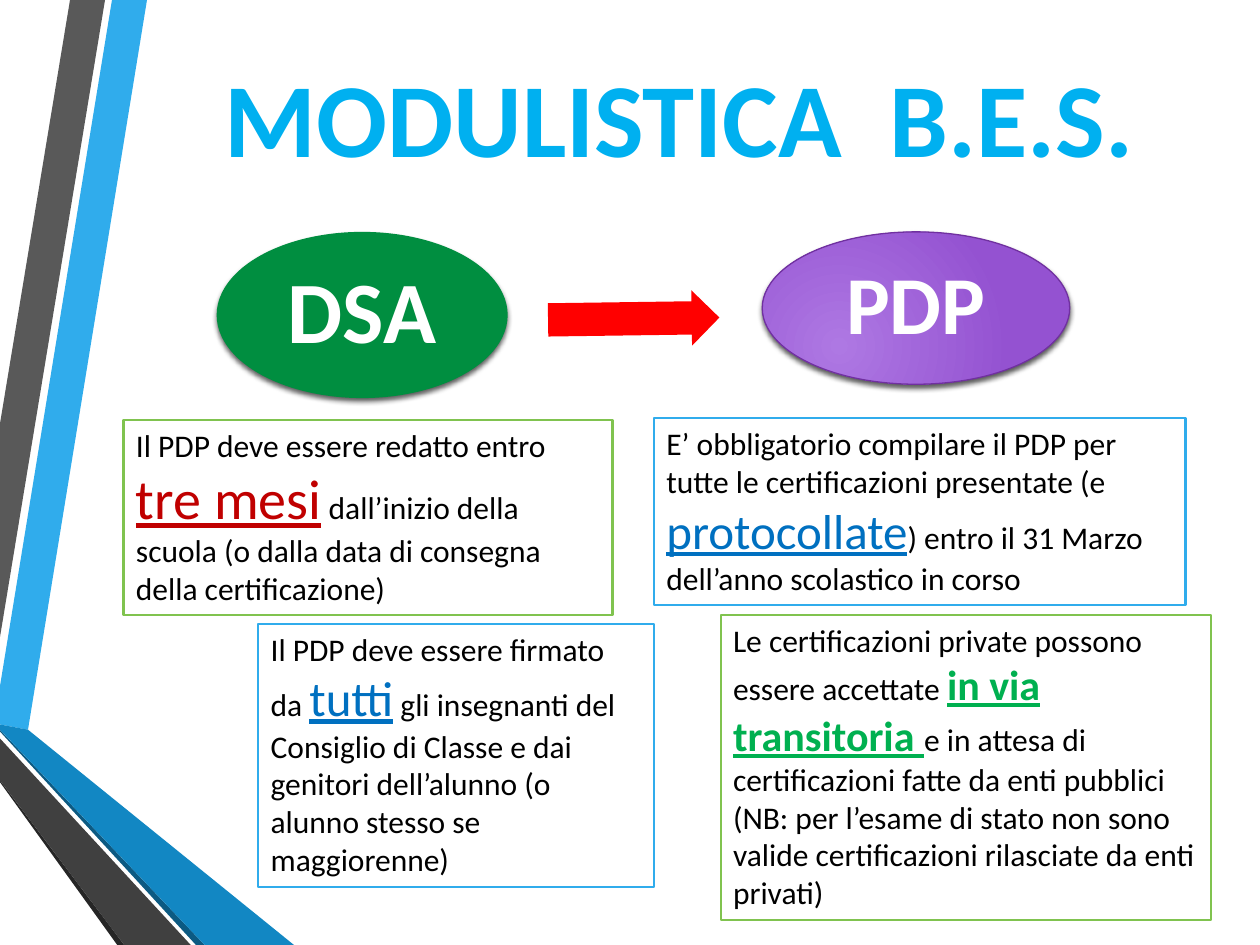
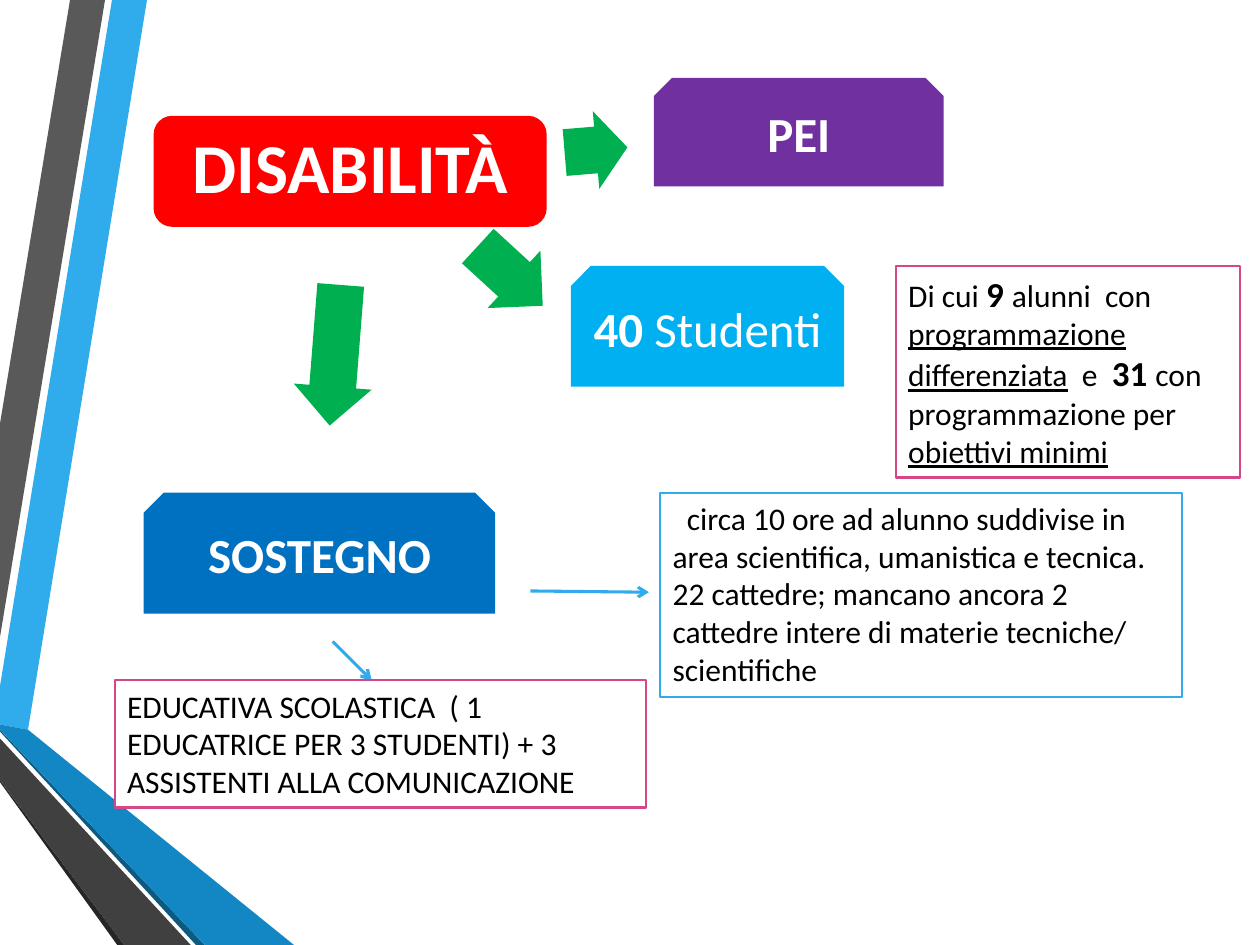
from dataclasses import dataclass

from pptx import Presentation
from pptx.dml.color import RGBColor
from pptx.enum.shapes import MSO_CONNECTOR, MSO_SHAPE
from pptx.enum.text import MSO_ANCHOR, MSO_AUTO_SIZE, PP_ALIGN
from pptx.oxml import parse_xml
from pptx.oxml.ns import nsdecls, qn
from pptx.oxml.xmlchemy import OxmlElement
from pptx.util import Pt

OVAL, ROUND = MSO_SHAPE.OVAL, MSO_SHAPE.ROUNDED_RECTANGLE
SNIP, RECT = MSO_SHAPE.SNIP_2_SAME_RECTANGLE, MSO_SHAPE.RECTANGLE
ARROW, STRAIGHT = MSO_SHAPE.RIGHT_ARROW, MSO_CONNECTOR.STRAIGHT
TOP, MIDDLE = MSO_ANCHOR.TOP, MSO_ANCHOR.MIDDLE
LEFT, CENTER = PP_ALIGN.LEFT, PP_ALIGN.CENTER
FIT, FIXED = MSO_AUTO_SIZE.SHAPE_TO_FIT_TEXT, MSO_AUTO_SIZE.NONE

FONT = "Calibri"
WHITE = RGBColor(0xFF, 0xFF, 0xFF)
BLACK = RGBColor(0x00, 0x00, 0x00)
SKY = RGBColor(0x30, 0xAC, 0xEC)
OCEAN = RGBColor(0x12, 0x87, 0xC3)
NAVY = RGBColor(0x0C, 0x5A, 0x82)
GREY = RGBColor(0x59, 0x59, 0x59)
COAL = RGBColor(0x40, 0x40, 0x40)
SOOT = RGBColor(0x26, 0x26, 0x26)
LIME = RGBColor(0x80, 0xC3, 0x4F)
PINK = RGBColor(0xD6, 0x47, 0x87)
GREEN = RGBColor(0x00, 0xB0, 0x50)
FOREST = RGBColor(0x00, 0x8E, 0x40)
RED = RGBColor(0xFF, 0x00, 0x00)
WINE = RGBColor(0xC0, 0x00, 0x00)
BLUE = RGBColor(0x00, 0x70, 0xC0)
CYAN = RGBColor(0x00, 0xB0, 0xF0)
PURPLE = RGBColor(0x70, 0x30, 0xA0)
LILAC = RGBColor(0xAE, 0x78, 0xE3)
VIOLET = RGBColor(0x94, 0x52, 0xD1)


@dataclass
class Run:
    text: str
    size: float | None = None
    color: RGBColor | None = None
    bold: bool | None = None
    under: bool = False


@dataclass
class Band:
    color: RGBColor
    points: list


@dataclass
class Label:
    """A filled shape with centred white text."""
    kind: int
    place: tuple
    fill: RGBColor
    size: float
    runs: list
    inset: float


@dataclass
class Block:
    """A filled arrow turned by an angle in degrees."""
    place: tuple
    angle: float
    fill: RGBColor


@dataclass
class Note:
    """A framed white box with black text."""
    place: tuple
    frame: RGBColor
    paras: list
    indent: float = 0


BANDS = [
    Band(SKY, [(0, 392), (0, 414), (16, 417), (84, 0), (64, 0)]),
    Band(GREY, [(60, 0), (40, 0), (0, 242), (0, 364)]),
    Band(SOOT, [(0, 446), (0, 447), (67, 540), (71, 540)]),
    Band(NAVY, [(0, 417), (0, 418), (112, 540), (117, 540)]),
    Band(OCEAN, [(0, 417), (117, 540), (168, 540), (16, 417), (0, 414)]),
    Band(COAL, [(0, 446), (71, 540), (109, 540), (0, 422)]),
]

DSA = Label(OVAL, (123.8, 132.5, 166.3, 95), FOREST, 50, [Run("DSA")], 5)
PDP = Label(OVAL, (435.6, 132.5, 175.7, 87.1), VIOLET, 47, [Run("PDP")], 5)
FORM_ARROW = Block((313.2, 166.3, 97.9, 31.7), -0.8, RED)
FORM_NOTES = [
    Note((70.6, 239.8, 279.4, 111.6), LIME, [[
        Run("Il PDP deve essere redatto entro "),
        Run("tre mesi", 32, WINE, under=True),
        Run(" dall’inizio della scuola (o dalla data di consegna della "
            "certificazione)")]]),
    Note((373.7, 239, 303.8, 106.6), SKY, [[
        Run("E’ obbligatorio compilare il PDP per tutte le certificazioni "
            "presentate (e "),
        Run("protocollate", 28, BLUE, under=True),
        Run(") entro il 31 Marzo dell’anno scolastico in corso")]]),
    Note((147.6, 356.4, 226.1, 150.5), SKY, [[
        Run("Il PDP deve essere firmato da "),
        Run("tutti", 28, BLUE, under=True),
        Run(" gli insegnanti del Consiglio di Classe e dai genitori "
            "dell’alunno (o alunno stesso se maggiorenne)")]]),
    Note((411.8, 351.4, 280.1, 174.2), LIME, [[
        Run("Le certificazioni private possono essere accettate "),
        Run("in via transitoria ", 24, GREEN, True, True),
        Run("e in attesa di certificazioni fatte da enti pubblici (NB: per "
            "l’esame di stato non sono valide certificazioni rilasciate da "
            "enti privati)")]]),
]

CARE_LABELS = [
    Label(ROUND, (87.8, 66.2, 224.6, 63.4), RED, 40, [Run("DISABILITÀ")], 4),
    Label(SNIP, (373.7, 44.6, 165.6, 61.9), PURPLE, 28, [Run("PEI")], 3),
    Label(SNIP, (82.1, 281.5, 200.9, 69.1), BLUE, 28, [Run("SOSTEGNO")], 3),
    Label(SNIP, (326.2, 151.9, 156.2, 69.1), CYAN, 28,
          [Run("40 "), Run("Studenti", bold=False)], 3),
]
CARE_ARROWS = [
    Block((322.6, 63.4, 36, 44.6), -4.8, GREEN),
    Block((151.2, 180.7, 80.6, 44.6), 94.5, GREEN),
    Block((266.4, 135.4, 50.4, 44.6), 42.6, GREEN),
]
CARE_LINES = [(303.1, 337.7, 370.8, 338.4), (190.1, 366.5, 212.4, 388.8)]
CARE_NOTES = [
    Note((511.9, 151.9, 196.6, 121), PINK, [[
        Run("Di cui "), Run("9 ", 20, bold=True), Run("alunni  con "),
        Run("programmazione", under=True), Run(" "),
        Run("differenziata", under=True), Run("  e  "),
        Run("31 ", 20, bold=True), Run("con programmazione per "),
        Run("obiettivi minimi", under=True)]]),
    Note((377.3, 281.5, 298.1, 116.6), SKY, [
        [Run("circa 10 ore ad alunno suddivise in area scientifica, "
             "umanistica e tecnica.")],
        [Run("22 cattedre; mancano ancora 2 cattedre intere di materie "
             "tecniche/ scientifiche")]], indent=8.1),
    Note((65.5, 388.8, 303.8, 72.7), PINK, [[
        Run("EDUCATIVA SCOLASTICA  ( 1  EDUCATRICE PER 3 STUDENTI) + 3 "
            "ASSISTENTI ALLA COMUNICAZIONE")]]),
]


def put_text(shape, paras: list, *, size: float, color: RGBColor = BLACK,
             bold: bool = False, align=LEFT, anchor=TOP, fit=FIXED,
             inset: float | None = None, spacing: float = 1) -> None:
    frame = shape.text_frame
    frame.word_wrap = True
    frame.auto_size = fit
    frame.vertical_anchor = anchor
    if inset is not None:
        frame.margin_left = frame.margin_right = Pt(inset)
        frame.margin_top = frame.margin_bottom = Pt(inset)
    for i, runs in enumerate(paras):
        para = frame.add_paragraph() if i else frame.paragraphs[0]
        para.alignment = align
        para.line_spacing = spacing
        for item in runs:
            run = para.add_run()
            run.text = item.text
            font = run.font
            font.name = FONT
            font.size = Pt(item.size or size)
            font.color.rgb = item.color or color
            font.bold = bold if item.bold is None else item.bold
            font.underline = item.under


def add_form(slide, kind: int, place: tuple, fill: RGBColor):
    """Add a flat preset shape without outline."""
    shape = slide.shapes.add_shape(kind, *map(Pt, place))
    shape.shadow.inherit = False
    shape.fill.solid()
    shape.fill.fore_color.rgb = fill
    shape.line.fill.background()
    return shape


def add_label(slide, label: Label):
    shape = add_form(slide, label.kind, label.place, label.fill)
    put_text(shape, [label.runs], size=label.size, color=WHITE, bold=True,
             align=CENTER, anchor=MIDDLE, inset=label.inset, spacing=0.9)
    return shape


def add_block(slide, block: Block) -> None:
    shape = add_form(slide, ARROW, block.place, block.fill)
    shape.adjustments[0] = 0.6
    shape.rotation = block.angle


def add_note(slide, note: Note) -> None:
    shape = add_form(slide, RECT, note.place, WHITE)
    shape.line.color.rgb = note.frame
    shape.line.width = Pt(1.25)
    put_text(shape, note.paras, size=18, fit=FIT)
    if note.indent:
        props = shape.text_frame.paragraphs[0]._p.get_or_add_pPr()
        props.set("indent", str(Pt(note.indent)))


def add_line(slide, ends: tuple) -> None:
    line = slide.shapes.add_connector(STRAIGHT, *map(Pt, ends))
    line.line.color.rgb = SKY
    line.line.width = Pt(1.75)
    props = line.element.spPr
    tip = OxmlElement("a:tailEnd")
    tip.set("type", "arrow")
    props.find(qn("a:ln")).append(tip)
    props.append(OxmlElement("a:effectLst"))


def cast_shadow(shape) -> None:
    effects = shape.element.spPr.find(qn("a:effectLst"))
    effects.append(parse_xml(
        f'<a:outerShdw {nsdecls("a")} blurRad="{Pt(3)}" dist="{Pt(2)}" '
        'dir="5400000" rotWithShape="0"><a:srgbClr val="000000">'
        '<a:alpha val="64000"/></a:srgbClr></a:outerShdw>'))


def shade_round(shape, inner: RGBColor, outer: RGBColor) -> None:
    """Fill with a radial gradient centred at the lower left."""
    shape.fill.gradient()
    for stop, color in zip(shape.fill.gradient_stops, (inner, outer)):
        stop.color.rgb = color
    grad = shape.element.spPr.find(qn("a:gradFill"))
    grad.replace(grad.find(qn("a:lin")), parse_xml(
        f'<a:path {nsdecls("a")} path="circle"><a:fillToRect l="50000" '
        't="100000" r="100000" b="50000"/></a:path>'))


def add_bands(master, slide) -> None:
    """Draw the bands on a slide, then move them to its master."""
    for i, band in enumerate(BANDS):
        start, *rest = band.points
        pen = slide.shapes.build_freeform(*start, scale=Pt(1))
        pen.add_line_segments(rest, close=True)
        shape = pen.convert_to_shape()
        shape.shadow.inherit = False
        shape.fill.solid()
        shape.fill.fore_color.rgb = band.color
        shape.line.fill.background()
        shape.element.nvSpPr.cNvPr.set("id", str(50 + i))
        master.shapes.element.insert(2 + i, shape.element)


def fill_forms(slide) -> None:
    title = slide.shapes.title
    title.left, title.top = Pt(79.2), Pt(26.6)
    title.width, title.height = Pt(617.8), Pt(79.9)
    put_text(title, [[Run("MODULISTICA  B.E.S.")]], size=60, color=CYAN,
             bold=True, align=CENTER)
    cast_shadow(add_label(slide, DSA))
    add_block(slide, FORM_ARROW)
    plan = add_label(slide, PDP)
    shade_round(plan, LILAC, VIOLET)
    plan.line.color.rgb = PURPLE
    plan.line.width = Pt(0.75)
    cast_shadow(plan)
    for note in FORM_NOTES:
        add_note(slide, note)


def fill_care(slide) -> None:
    for label in CARE_LABELS:
        add_label(slide, label)
    for block in CARE_ARROWS:
        add_block(slide, block)
    for ends in CARE_LINES:
        add_line(slide, ends)
    for note in CARE_NOTES:
        add_note(slide, note)


def main() -> None:
    deck = Presentation()
    deck.slide_width, deck.slide_height = Pt(720), Pt(540)
    forms = deck.slides.add_slide(deck.slide_layouts.get_by_name("Title Only"))
    care = deck.slides.add_slide(deck.slide_layouts.get_by_name("Blank"))
    add_bands(deck.slide_master, forms)
    fill_forms(forms)
    fill_care(care)
    deck.save("out.pptx")


if __name__ == "__main__":
    main()
